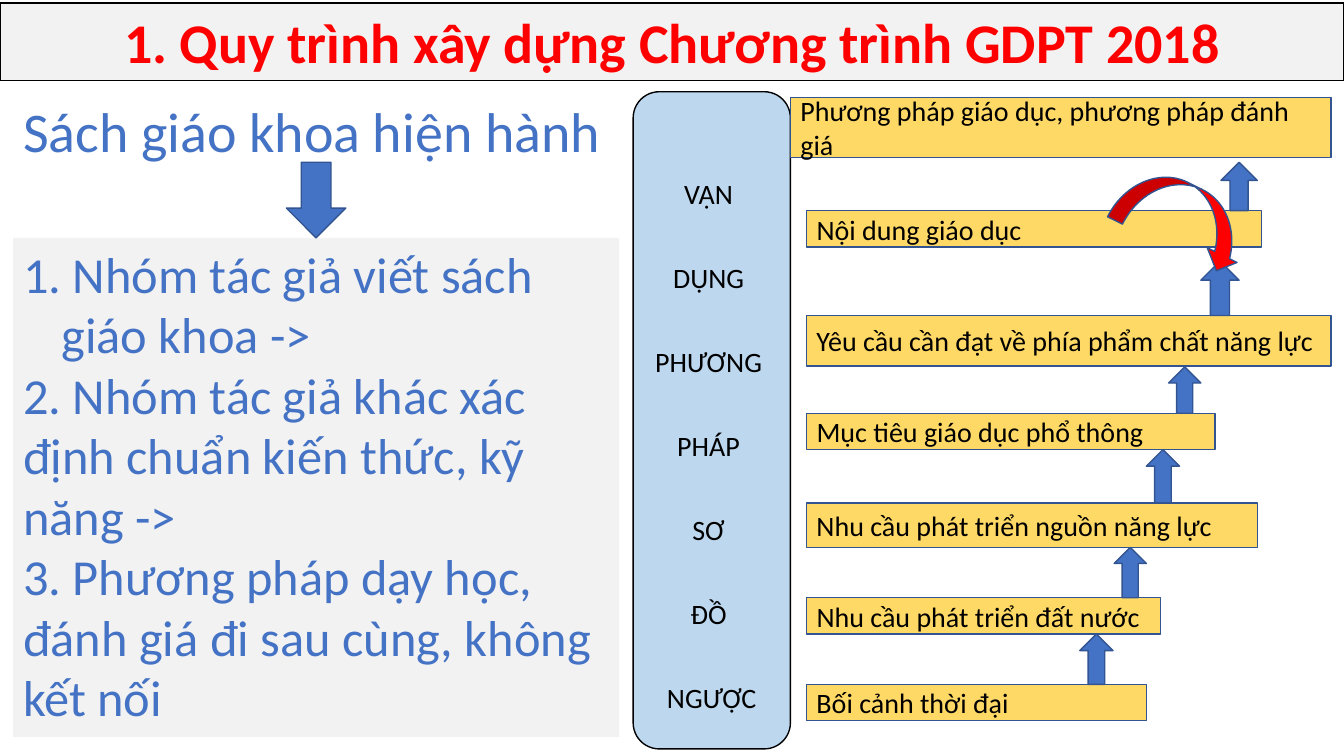
"""Build the slide on how the 2018 general education curriculum was developed."""
from dataclasses import dataclass

from lxml.etree import SubElement
from pptx import Presentation
from pptx.dml.color import RGBColor
from pptx.enum.shapes import MSO_SHAPE
from pptx.enum.text import MSO_ANCHOR, PP_ALIGN
from pptx.oxml.ns import qn
from pptx.util import Inches, Pt


@dataclass(frozen=True)
class Theme:
    font: str = "Calibri"
    title_size: int = 40
    body_size: int = 36
    step_size: int = 20
    red: str = "FF0000"
    blue: str = "4472C4"
    edge: str = "325491"
    black: str = "000000"
    gray: str = "F2F2F2"
    sky: str = "BDD7EE"
    gold: str = "FFD966"


T = Theme()
prs = Presentation()
prs.slide_width, prs.slide_height = Inches(13.33), Inches(7.5)
s = prs.slides.add_slide(prs.slide_layouts[6])


def add_box(kind, left, top, width, height, fill=None, line=None):
    sp = s.shapes.add_shape(kind, Inches(left), Inches(top), Inches(width), Inches(height))
    sp.shadow.inherit = False
    if fill:
        sp.fill.solid()
        sp.fill.fore_color.rgb = RGBColor.from_string(fill)
    else:
        sp.fill.background()
    if line:
        sp.line.color.rgb = RGBColor.from_string(line)
        sp.line.width = Pt(1)
    else:
        sp.line.fill.background()
    return sp


def write(sp, *lines, size=T.step_size, color=T.black, bold=False,
          align=PP_ALIGN.LEFT, anchor=MSO_ANCHOR.MIDDLE, spacing=None):
    tf = sp.text_frame
    tf.word_wrap = True
    tf.vertical_anchor = anchor
    for i, line in enumerate(lines):
        p = tf.add_paragraph() if i else tf.paragraphs[0]
        p.alignment = align
        p.line_spacing = spacing
        r = p.add_run()
        r.text = line
        r.font.name, r.font.size, r.font.bold = T.font, Pt(size), bold
        r.font.color.rgb = RGBColor.from_string(color)
    return tf


title = add_box(MSO_SHAPE.RECTANGLE, 0, 0.03, 13.33, 0.77, T.gray, T.black)
write(title, "1. Quy trình xây dựng Chương trình GDPT 2018", size=T.title_size,
      color=T.red, bold=True, align=PP_ALIGN.CENTER, anchor=MSO_ANCHOR.TOP)

heading = s.shapes.add_textbox(Inches(0.13), Inches(0.91), Inches(6.01), Inches(0.77))
write(heading, "Sách giáo khoa hiện hành", size=T.title_size, color=T.blue,
      anchor=MSO_ANCHOR.TOP)

textbook = add_box(MSO_SHAPE.RECTANGLE, 0.13, 2.36, 6.01, 4.95, T.gray)
tf = write(textbook,
           " Nhóm tác giả viết sách giáo khoa ->",
           "2. Nhóm tác giả khác xác định chuẩn kiến thức, kỹ năng ->",
           "3. Phương pháp dạy học, đánh giá đi sau cùng, không kết nối",
           size=T.body_size, color=T.blue, anchor=MSO_ANCHOR.TOP)
pPr = tf.paragraphs[0]._p.get_or_add_pPr()
pPr.set("marL", str(Inches(0.38)))
pPr.set("indent", str(-Inches(0.38)))
SubElement(pPr, qn("a:buFont"), typeface=T.font)
SubElement(pPr, qn("a:buAutoNum"), type="arabicPeriod")

method = add_box(MSO_SHAPE.ROUNDED_RECTANGLE, 6.28, 0.91, 1.56, 6.52, T.sky, T.black)
write(method, "VẬN ", "DỤNG ", "PHƯƠNG ", "PHÁP ", "SƠ ", "ĐỒ ", "NGƯỢC",
      align=PP_ALIGN.CENTER, spacing=2.5)

steps = [
    ("Phương pháp giáo dục, phương pháp đánh giá", 7.84, 0.97, 5.36, 0.59),
    ("Nội dung giáo dục", 8, 2.09, 4.51, 0.36),
    ("Yêu cầu cần đạt về phía phẩm chất năng lực", 8, 3.13, 5.2, 0.5),
    ("Mục tiêu giáo dục phổ thông", 8, 4.1, 4.05, 0.36),
    ("Nhu cầu phát triển nguồn năng lực", 8, 4.99, 4.47, 0.44),
    ("Nhu cầu phát triển đất nước", 8, 5.93, 3.51, 0.36),
    ("Bối cảnh thời đại", 8, 6.79, 3.37, 0.36),
]
for text, *place in steps:
    write(add_box(MSO_SHAPE.RECTANGLE, *place, T.gold, T.edge), text)

arrows = [(12.11, 1.61, 0.36), (11.91, 2.59, 0.38), (11.59, 3.64, 0.32),
          (11.37, 4.46, 0.33), (11.05, 5.43, 0.32), (10.71, 6.29, 0.33)]
for (left, top, width), (_, _, step_top, _, _) in zip(arrows, steps[1:]):
    add_box(MSO_SHAPE.UP_ARROW, left, top, width, step_top - top, T.blue, T.edge)

loop = add_box(MSO_SHAPE.CURVED_DOWN_ARROW, 11.06, 1.83, 1.37, 0.66, T.red, T.edge)
loop.rotation = 26.4
add_box(MSO_SHAPE.DOWN_ARROW, 2.84, 1.61, 0.59, 0.75, T.blue, T.edge)

prs.save("out.pptx")
